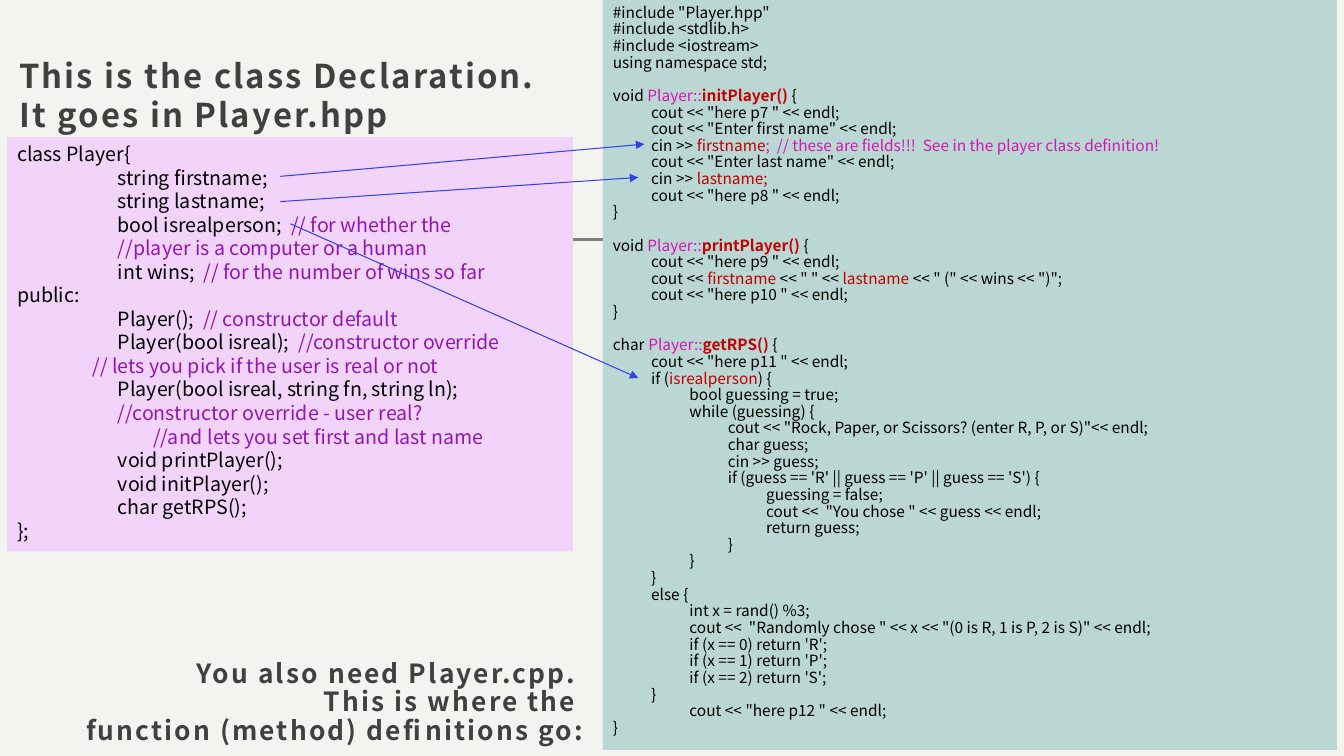
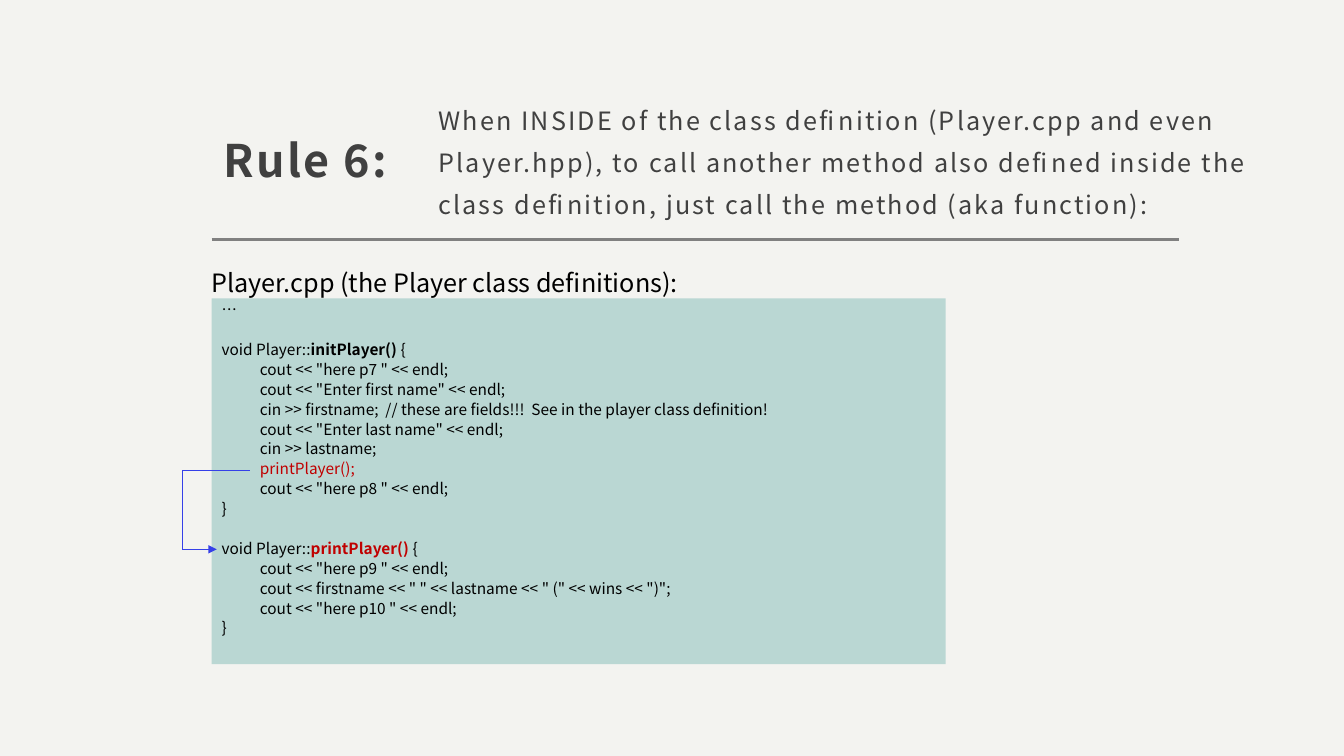
"""Build two slides on a class declaration, its definitions and calls between methods."""
from dataclasses import dataclass

from lxml import etree
from pptx import Presentation
from pptx.dml.color import RGBColor
from pptx.enum.shapes import MSO_CONNECTOR, MSO_SHAPE
from pptx.enum.text import MSO_ANCHOR, MSO_AUTO_SIZE, PP_ALIGN
from pptx.oxml.ns import qn
from pptx.util import Inches, Pt

STRAIGHT, RECTANGLE = MSO_CONNECTOR.STRAIGHT, MSO_SHAPE.RECTANGLE
TOP, BOTTOM = MSO_ANCHOR.TOP, MSO_ANCHOR.BOTTOM
LEFT, RIGHT = PP_ALIGN.LEFT, PP_ALIGN.RIGHT
FIXED = MSO_AUTO_SIZE.NONE


@dataclass(frozen=True)
class Theme:
    font: str = "Noto Sans CJK JP"
    paper: str = "F3F3F0"
    rule: str = "808080"
    heading: str = "404040"
    ink: str = "000000"
    lilac: str = "F2D4FA"
    teal: str = "BAD7D3"
    purple: str = "9315B7"
    pink: str = "D517B1"
    red: str = "C00000"
    arrow: str = "3540E8"
    headline: float = 32
    title: float = 23.4
    note: float = 18.8
    body: float = 18
    declaration: float = 14
    code: float = 11


@dataclass(frozen=True)
class TextStyle:
    size: float
    colour: str
    bold: bool = False
    tracking: int = 0
    spacing: float = 1.0
    before: float = 0
    step: float = 0
    align: int = LEFT
    anchor: int = TOP
    insets: tuple = (0.1, 0.05, 0.1, 0.05)


theme = Theme()
deck = Presentation()
deck.slide_width, deck.slide_height = Inches(13.33), Inches(7.5)
COLUMN, ROW = deck.slide_width / 100, deck.slide_height / 100
ROOMY = (0.12, 0.12, 0.12, 0.1)


def write(frame, lines, style):
    """Fill a text frame; None in lines leaves a gap of one line."""
    frame.word_wrap, frame.auto_size = True, FIXED
    frame.vertical_anchor = style.anchor
    frame.margin_left, frame.margin_top, frame.margin_right, frame.margin_bottom = map(Inches, style.insets)
    para, gap = None, 0
    for line in lines:
        if line is None:
            gap = style.size * 1.2 * style.spacing + style.before
            continue
        level, *spans = line
        para = frame.add_paragraph() if para else frame.paragraphs[0]
        para.alignment, para.line_spacing = style.align, style.spacing
        para.space_before, gap = Pt(style.before + gap), 0
        properties = para._p.get_or_add_pPr()
        properties.set("marL", str(Inches(level * style.step)))
        properties.set("indent", "0")
        etree.SubElement(properties, qn("a:buNone"))
        for span in spans:
            text, colour, bold = span if isinstance(span, tuple) else (span, style.colour, style.bold)
            run = para.add_run()
            run.text = text
            run.font.name, run.font.size, run.font.bold = theme.font, Pt(style.size), bold
            run.font.color.rgb = RGBColor.from_string(colour)
            if style.tracking:
                run._r.get_or_add_rPr().set("spc", str(style.tracking))


def wire(page, start, end, colour, width, arrow):
    """Draw a straight line between two grid points."""
    ends = [int(share * unit) for share, unit in zip(start + end, (COLUMN, ROW) * 2)]
    line = page.shapes.add_connector(STRAIGHT, *ends)
    line.line.color.rgb, line.line.width = RGBColor.from_string(colour), Pt(width)
    if arrow:
        etree.SubElement(line.line._get_or_add_ln(), qn("a:tailEnd"), type="triangle")
    etree.SubElement(line._element.spPr, qn("a:effectLst"))
    return line


master = deck.slide_master
master.background.fill.solid()
master.background.fill.fore_color.rgb = RGBColor.from_string(theme.paper)
files_page = deck.slides.add_slide(deck.slide_layouts[5])
rule_page = deck.slides.add_slide(deck.slide_layouts[1])
divider = wire(files_page, (15.75, 31.73), (87.7, 31.73), theme.rule, 2, False)
divider._element.nvCxnSpPr.cNvPr.set("id", "90")
master.shapes._spTree.append(divider._element)

title_style = TextStyle(theme.title, theme.heading, True, 150, anchor=BOTTOM, insets=ROOMY)
headline_style = TextStyle(theme.headline, theme.heading, True, 150, 1.3, anchor=BOTTOM, insets=ROOMY)
note_style = TextStyle(theme.note, theme.heading, True, 150, 0.9, align=RIGHT, anchor=BOTTOM, insets=ROOMY)
body_style = TextStyle(theme.body, theme.heading, False, 150, 1.4, 9.3, insets=ROOMY)
label_style = TextStyle(theme.body, theme.ink)
declaration_style = TextStyle(theme.declaration, theme.ink, step=1)
dense_style = TextStyle(theme.code, theme.ink, spacing=0.9, step=0.38)
airy_style = TextStyle(theme.code, theme.ink, before=1, step=0.38, insets=(0.1, 0.02, 0.1, 0.05))

declaration = [
    (0, "class Player{"),
    (1, "string firstname;"),
    (1, "string lastname;"),
    (1, "bool isrealperson;  ", ("// for whether the", theme.purple, False)),
    (1, ("//player is a computer or a human", theme.purple, False)),
    (1, "int wins;  ", ("// for the number of wins so far", theme.purple, False)),
    (0, "public:"),
    (1, "Player();  ", ("// constructor default", theme.purple, False)),
    (1, "Player(bool isreal);  ", ("//constructor override", theme.purple, False)),
    (0.75, ("// lets you pick if the user is real or not", theme.purple, False)),
    (1, "Player(bool isreal, string fn, string ln);"),
    (1, ("//constructor override - user real?", theme.purple, False)),
    (1.35, ("//and lets you set first and last name", theme.purple, False)),
    (1, "void printPlayer();"),
    (1, "void initPlayer();"),
    (1, "char getRPS();"),
    (0, "};"),
]

close = (0, "}")
ask_first = [(1, 'cout << "here p7 " << endl;'), (1, 'cout << "Enter first name" << endl;')]
ask_last = (1, 'cout << "Enter last name" << endl;')
init_end = [(1, 'cout << "here p8 " << endl;'), close, None]
print_start = (1, 'cout << "here p9 " << endl;')
print_end = [(1, 'cout << "here p10 " << endl;'), close]
fields_remark = ";  // these are fields!!!  See in the player class definition!"
owner = ("Player::", theme.pink, False)
init_name, print_name, rps_name = [
    (name, theme.red, True) for name in ("initPlayer() ", "printPlayer() ", "getRPS() ")]

definitions = [
    (0, '#include "Player.hpp"'),
    (0, "#include <stdlib.h>"),
    (0, "#include <iostream>"),
    (0, "using namespace std;"),
    None,
    (0, "void ", owner, init_name, "{"),
    *ask_first,
    (1, "cin >> ", ("firstname", theme.red, False), (fields_remark, theme.pink, False)),
    ask_last,
    (1, "cin >> ", ("lastname;", theme.red, False)),
    *init_end,
    (0, "void ", owner, print_name, "{"),
    print_start,
    (1, "cout << ", ("firstname ", theme.red, False), '<< " " << ',
     ("lastname ", theme.red, False), '<< " (" << wins << ")";'),
    *print_end,
    None,
    (0, "char ", owner, rps_name, "{"),
    (1, 'cout << "here p11 " << endl;'),
    (1, "if (", ("isrealperson", theme.red, False), ") {"),
    (2, "bool guessing = true;"),
    (2, "while (guessing) {"),
    (3, 'cout << "Rock, Paper, or Scissors? (enter R, P, or S)"<< endl;'),
    (3, "char guess;"),
    (3, "cin >> guess;"),
    (3, "if (guess == 'R' || guess == 'P' || guess == 'S') {"),
    (4, "guessing = false;"),
    (4, 'cout <<  "You chose " << guess << endl;'),
    (4, "return guess;"),
    *[(level, "}") for level in (3, 2, 1)],
    (1, "else {"),
    (2, "int x = rand() %3;"),
    (2, 'cout <<  "Randomly chose " << x << "(0 is R, 1 is P, 2 is S)" << endl;'),
    *[(2, f"if (x == {number}) return '{letter}';") for number, letter in enumerate("RPS")],
    (1, "}"),
    (2, 'cout << "here p12 " << endl;'),
    close,
]

calls = [
    (0, "…"),
    None,
    (0, "void Player::", ("initPlayer() ", theme.ink, True), "{"),
    *ask_first,
    (1, "cin >> firstname" + fields_remark),
    ask_last,
    (1, "cin >> lastname;"),
    (1, ("printPlayer();", theme.red, False)),
    *init_end,
    (0, "void Player::", print_name, "{"),
    print_start,
    (1, 'cout << firstname << " " << lastname << " (" << wins << ")";'),
    *print_end,
]

file_title = [(0, "This is the class Declaration."), (0, "It goes in Player.hpp")]
file_note = [(0, "You also need Player.cpp. "), (0, "This is where the "),
             (0, "function (method) definitions go:")]
rule_text = [(0, "When INSIDE of the class definition (Player.cpp and even Player.hpp), "
                 "to call another method also defined inside the class definition, "
                 "just call the method (aka function):")]
label_text = [(0, "Player.cpp (the Player class definitions):")]

NOWHERE = (0, 0, 0, 0)
for box, place, fill, lines, style in [
    (files_page.shapes.title, (0.53, -0.27, 42.09, 19.33), None, file_title, title_style),
    (files_page.shapes.add_shape(RECTANGLE, *NOWHERE), (0.53, 18.13, 42.09, 54.8),
     theme.lilac, declaration, declaration_style),
    (files_page.shapes.add_textbox(*NOWHERE), (1.43, 81.87, 42.91, 18.13), None, file_note, note_style),
    (files_page.shapes.add_shape(RECTANGLE, *NOWHERE), (44.86, 0, 54.61, 99.2),
     theme.teal, definitions, dense_style),
    (rule_page.shapes.title, (15.75, 6.4, 71.94, 19.6), None, [(0, "Rule 6:")], headline_style),
    (rule_page.placeholders[1], (31.73, 10.67, 65.49, 21.2), None, rule_text, body_style),
    (rule_page.shapes.add_shape(RECTANGLE, *NOWHERE), (15.75, 39.47, 54.61, 48.4),
     theme.teal, calls, airy_style),
    (rule_page.shapes.add_textbox(*NOWHERE), (15, 34.67, 38.41, 5.33), None, label_text, label_style),
]:
    box.left, box.top, box.width, box.height = [
        int(share * unit) for share, unit in zip(place, (COLUMN, ROW) * 2)]
    if fill:
        box.shadow.inherit = False
        box.fill.solid()
        box.fill.fore_color.rgb = RGBColor.from_string(fill)
        box.line.fill.background()
    write(box.text_frame, lines, style)

for page, start, end, arrow in [
    (files_page, (20.86, 23.33), (47.94, 19.07), True),
    (files_page, (20.86, 26.67), (47.49, 23.47), True),
    (files_page, (21.61, 29.6), (47.49, 50), True),
    (rule_page, (18.6, 62.27), (13.58, 62.27), False),
    (rule_page, (13.58, 62.27), (13.58, 72.67), False),
    (rule_page, (13.58, 72.67), (16.13, 72.67), True),
]:
    wire(page, start, end, theme.arrow, 0.75, arrow)

deck.save("out.pptx")
